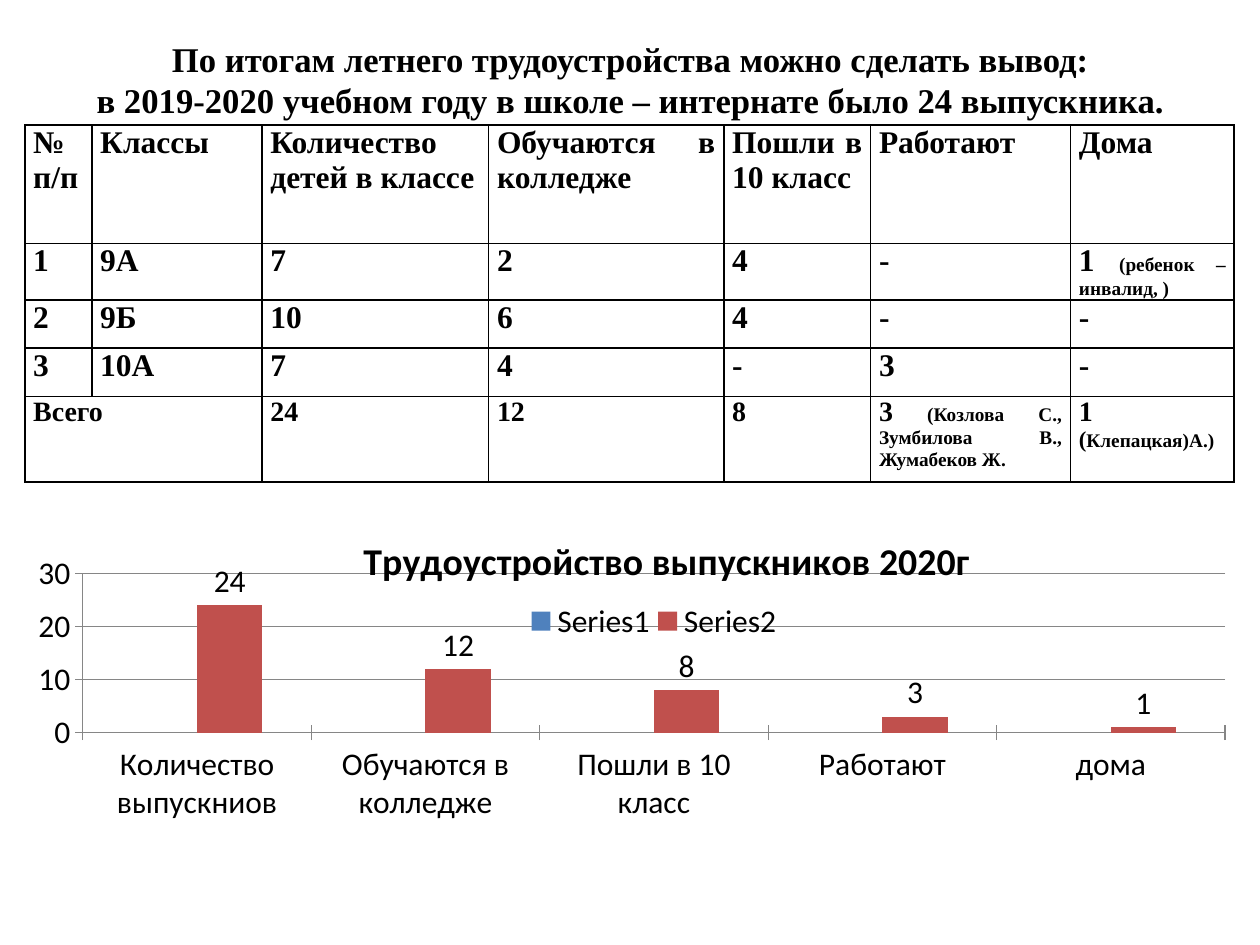
from pptx import Presentation
from pptx.chart.data import CategoryChartData as Data
from pptx.dml.color import RGBColor as Rgb
from pptx.enum.chart import XL_CHART_TYPE as Kind, XL_LABEL_POSITION as Spot
from pptx.enum.chart import XL_LEGEND_POSITION as Side, XL_TICK_MARK as Tick
from pptx.enum.text import MSO_ANCHOR as Anchor, PP_ALIGN as Align
from pptx.oxml import parse_xml
from pptx.oxml.ns import nsdecls, qn
from pptx.util import Cm, Pt

HEX = {"ink": "000000", "blue": "4F81BD", "red": "C0504D", "grid": "868686"}
SERIF, SANS = "Times New Roman", "Calibri"

# Content: a cell is a text, or a list of (text, size) runs
TITLE = ["По итогам летнего трудоустройства можно сделать вывод:",
         "в 2019-2020 учебном году в школе – интернате было 24 выпускника."]
ROWS = [
    ["№\nп/п", "Классы", "Количество детей в классе", "Обучаются в колледже",
     "Пошли в 10 класс", "Работают", "Дома"],
    ["1", "9А", "7", "2", "4", "-", [("1 ", 18), ("(ребенок – инвалид, )", 11)]],
    ["2", "9Б", "10", "6", "4", "-", "-"],
    ["3", "10А", "7", "4", "-", "3", "-"],
    ["Всего", "", "24", "12", "8",
     [("3", 16), (" (Козлова С., Зумбилова В., Жумабеков Ж.", 11)],
     [("1 ", 16), ("(", 13), ("Клепацкая)А.)", 11)]],
]
WIDE = [1.35, 3.43, 4.57, 4.74, 2.96, 4.03, 3.3]
HIGH = [2.39, 1.14, 0.97, 0.97, 1.73]
HEAD = "Трудоустройство выпускников 2020г"
CATS = ["Количество выпускниов", "Обучаются в колледже", "Пошли в 10 класс",
        "Работают", "дома"]
SERIES = [("Series1", [None] * 5, "blue"), ("Series2", [24, 12, 8, 3, 1], "red")]


def style(font, size, bold=False, name=SANS):
    look = {"size": Pt(size), "bold": bold, "name": name}
    for key, val in look.items():
        setattr(font, key, val)
    font.color.rgb = Rgb.from_string(HEX["ink"])


def write(par, text, size):
    run = par.add_run()
    run.text = text
    style(run.font, size, True, SERIF)


def edge(cell):
    """Draw a 1 pt line on all four sides of a cell."""
    props = cell._tc.get_or_add_tcPr()
    for i, side in enumerate(("lnL", "lnR", "lnT", "lnB")):
        props.insert(i, parse_xml(
            f'<a:{side} {nsdecls("a")} w="12700"><a:solidFill>'
            f'<a:srgbClr val="{HEX["ink"]}"/></a:solidFill></a:{side}>'))


def place(part, at, after=None, inner=False):
    """Give a chart part a fixed place, as shares of the chart."""
    for old in part.findall(qn("c:layout")):
        part.remove(old)
    tags = '<c:layoutTarget val="inner"/>' if inner else ""
    tags += "".join(f'<c:{k}Mode val="edge"/>' for k in "xy")
    tags += "".join(f'<c:{k} val="{v}"/>' for k, v in zip("xywh", at))
    node = parse_xml(f'<c:layout {nsdecls("c")}><c:manualLayout>{tags}'
                     '</c:manualLayout></c:layout>')
    if after:
        part.find(qn(after)).addnext(node)
    else:
        part.insert(0, node)


deck = Presentation()
deck.slide_width, deck.slide_height = Cm(25.4), Cm(19.05)
slide = deck.slides.add_slide(deck.slide_layouts[5])

# Title
title = slide.shapes.title
spot = {"left": 1.27, "top": 0.76, "width": 22.86, "height": 3.18}
for key, val in spot.items():
    setattr(title, key, Cm(val))
frame = title.text_frame
frame.vertical_anchor, frame.margin_top = Anchor.TOP, 0
par = frame.paragraphs[0]
par.alignment = Align.CENTER
for i, line in enumerate(TITLE):
    if i:
        par.add_line_break()
    write(par, line, 19.8)

# Table
table = slide.shapes.add_table(
    len(ROWS), len(WIDE), Cm(0.5), Cm(2.52), Cm(sum(WIDE)), Cm(sum(HIGH))).table
table.first_row = table.horz_banding = False
for col, size in zip(table.columns, WIDE):
    col.width = Cm(size)
for row, size in zip(table.rows, HIGH):
    row.height = Cm(size)
pads = {"margin_left": Cm(0.17), "margin_right": Cm(0.17),
        "margin_top": 0, "margin_bottom": 0}
last = len(ROWS) - 1
for r, row in enumerate(ROWS):
    size = 16 if r == last else 18
    for c, item in enumerate(row):
        cell = table.cell(r, c)
        cell.fill.background()
        edge(cell)
        for key, val in pads.items():
            setattr(cell, key, val)
        lines = ([[(t, size)] for t in item.split("\n") if t]
                 if isinstance(item, str) else [item])
        for i, runs in enumerate(lines):
            frame = cell.text_frame
            par = frame.add_paragraph() if i else frame.paragraphs[0]
            par.alignment = Align.JUSTIFY
            for text, pt in runs:
                write(par, text, pt)
table.cell(last, 0).merge(table.cell(last, 1))

# Chart
data = Data()
data.categories = CATS
for name, vals, _ in SERIES:
    data.add_series(name, vals)
chart = slide.shapes.add_chart(Kind.COLUMN_CLUSTERED, Cm(0.71), Cm(10.13),
                               Cm(24), Cm(7.14), data).chart
style(chart.font, 18)
chart.has_title = chart.has_legend = True
par = chart.chart_title.text_frame.paragraphs[0]
run = par.add_run()
run.text = HEAD
style(run.font, 21.6, True)
chart.legend.position = Side.TOP
chart.legend.include_in_layout = False

plot = chart.plots[0]
plot.gap_width, plot.overlap, plot.vary_by_categories = 150, 0, False
for ser, (_, _, tint) in zip(plot.series, SERIES):
    ser.format.fill.solid()
    ser.format.fill.fore_color.rgb = Rgb.from_string(HEX[tint])
    ser.data_labels.show_value = True
    ser.data_labels.position = Spot.OUTSIDE_END

# Axes
cat, val = chart.category_axis, chart.value_axis
val.minimum_scale, val.maximum_scale, val.major_unit = 0, 30, 10
val.has_major_gridlines = True
for axis in (cat, val):
    axis.major_tick_mark = Tick.CROSS
for item in (cat, val, val.major_gridlines):
    item.format.line.color.rgb = Rgb.from_string(HEX["grid"])
    item.format.line.width = Pt(0.75)

# Places inside the chart
body = chart._chartSpace.find(qn("c:chart"))
place(body.find(qn("c:title")), (0.27, 0.07), "c:tx")
place(body.find(qn("c:legend")), (0.41, 0.27, 0.22, 0.13), "c:legendPos")
place(body.find(qn("c:plotArea")), (0.04, 0.2, 0.96, 0.45), inner=True)

deck.save("out.pptx")
